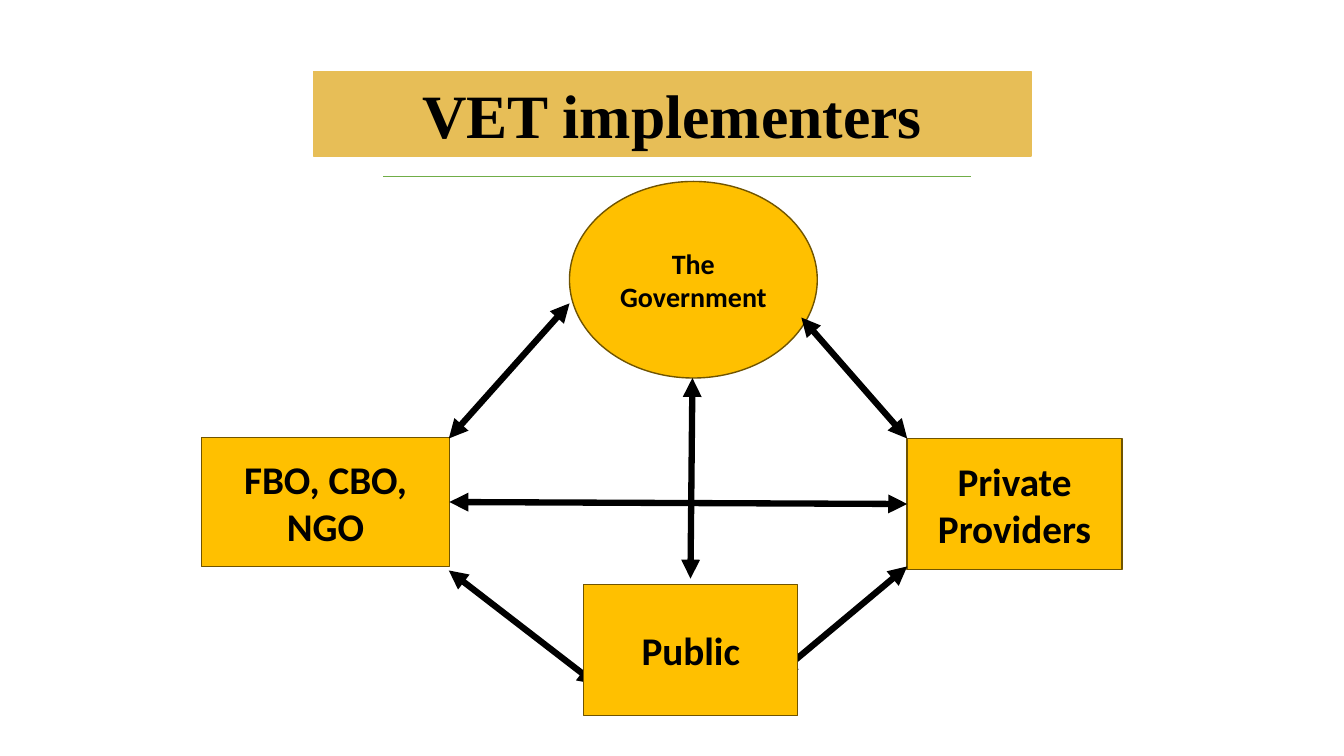
from dataclasses import dataclass

from lxml.etree import SubElement
from pptx import Presentation
from pptx.dml.color import RGBColor
from pptx.enum.shapes import MSO_CONNECTOR, MSO_SHAPE
from pptx.enum.text import MSO_ANCHOR, PP_ALIGN
from pptx.oxml.ns import qn
from pptx.util import Pt


@dataclass(frozen=True)
class Theme:
    """Colours, fonts, type sizes and line widths of the slide."""
    banner: str = "E7BE57"
    node: str = "FFC000"
    edge: str = "705400"
    rule: str = "70AD47"
    ink: str = "000000"
    title_font: str = "Times New Roman"
    body_font: str = "Calibri"
    title_size: float = 44
    label_size: float = 28
    small_size: float = 20
    thin: float = 1
    thick: float = 4.5


class Deck:
    """Holds the theme and the current slide, and draws its elements."""

    def __init__(self, prs, theme):
        """Add a blank slide to draw on."""
        self.theme = theme
        self.s = prs.slides.add_slide(prs.slide_layouts[6])

    def box(self, text, at, fill, edge, size, font, kind=MSO_SHAPE.RECTANGLE):
        """Draw a filled shape with a centred bold label."""
        sp = self.s.shapes.add_shape(kind, *map(Pt, at))
        sp.shadow.inherit = False
        sp.fill.solid()
        sp.fill.fore_color.rgb = RGBColor.from_string(fill)
        sp.line.color.rgb = RGBColor.from_string(edge)
        sp.line.width = Pt(self.theme.thin)
        tf = sp.text_frame
        tf.word_wrap = True
        tf.vertical_anchor = MSO_ANCHOR.MIDDLE
        p = tf.paragraphs[0]
        p.alignment = PP_ALIGN.CENTER
        r = p.add_run()
        r.text = text
        for name, value in {"name": font, "size": Pt(size), "bold": True}.items():
            setattr(r.font, name, value)
        r.font.color.rgb = RGBColor.from_string(self.theme.ink)
        return sp

    def title(self, text, at):
        """Draw the title banner."""
        t = self.theme
        return self.box(text, at, t.banner, t.banner, t.title_size, t.title_font)

    def node(self, text, at, size=None, kind=MSO_SHAPE.RECTANGLE):
        """Draw one implementer."""
        t = self.theme
        return self.box(text, at, t.node, t.edge, size or t.label_size, t.body_font, kind)

    def line(self, ends, color, width):
        """Draw a straight line without a shadow."""
        c = self.s.shapes.add_connector(MSO_CONNECTOR.STRAIGHT, *map(Pt, ends))
        c.line.color.rgb = RGBColor.from_string(color)
        c.line.width = Pt(width)
        SubElement(c._element.spPr, qn("a:effectLst"))
        return c

    def arrow(self, ends):
        """Draw a thick line with an arrowhead at both ends."""
        c = self.line(ends, self.theme.ink, self.theme.thick)
        for end in ("a:headEnd", "a:tailEnd"):
            SubElement(c.line._get_or_add_ln(), qn(end), type="triangle")
        return c


def main():
    """Build and save the slide."""
    prs = Presentation()
    prs.slide_width, prs.slide_height = Pt(960), Pt(540)
    theme = Theme()
    deck = Deck(prs, theme)

    deck.title("VET implementers", (224, 51, 512.5, 60.5))
    deck.line((273.6, 126, 693.4, 126), theme.rule, theme.thin)
    deck.node("The Government", (406.8, 129.6, 177, 140.4), theme.small_size, MSO_SHAPE.OVAL)
    private = deck.node("Private Providers", (648, 313.2, 153.4, 93.6))
    ngo = deck.node("FBO, CBO, NGO", (144, 312.5, 177, 92.2))

    across = deck.arrow((648, 360, 321, 358.6))
    across.begin_connect(private, 1)
    across.end_connect(ngo, 3)
    for ends in (
        (494.6, 270, 493.2, 413.3),
        (648, 404.6, 555.8, 481.7),
        (572.4, 226.8, 648, 313.2),
        (406.8, 216.7, 320.6, 313.2),
        (426.2, 488.9, 320.6, 407.5),
    ):
        deck.arrow(ends)

    deck.node("Public", (416.9, 417.6, 153, 93.6))
    prs.save("out.pptx")


if __name__ == "__main__":
    main()
